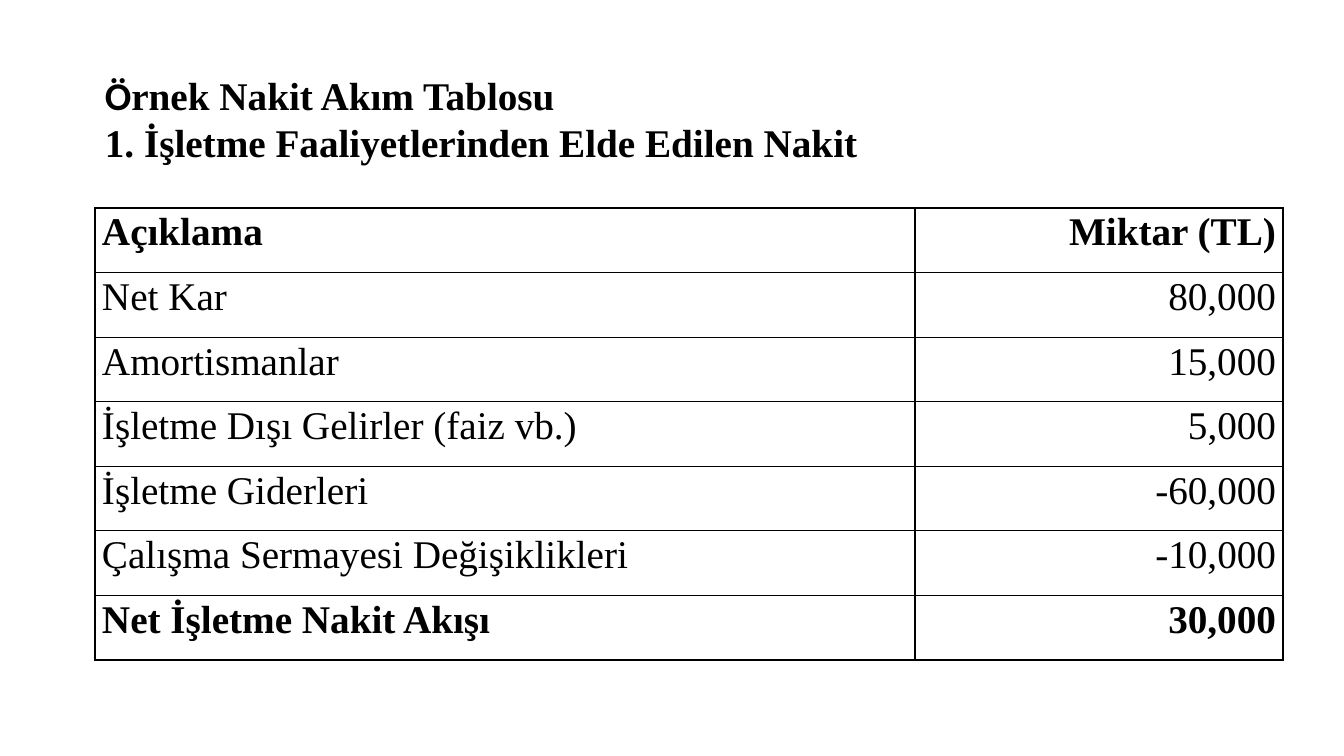
from lxml.etree import SubElement
from pptx import Presentation
from pptx.dml.color import RGBColor
from pptx.enum.text import MSO_ANCHOR, PP_ALIGN
from pptx.oxml.ns import qn
from pptx.util import Pt

SERIF = "Times New Roman"
INK = "000000"
TITLE = [
    [("Ö", "Calibri"), ("rnek Nakit Akım Tablosu", SERIF)],
    [("1. İşletme Faaliyetlerinden Elde Edilen Nakit", SERIF)],
]
ROWS = [
    ("Açıklama", "Miktar (TL)"),
    ("Net Kar", "80,000"),
    ("Amortismanlar", "15,000"),
    ("İşletme Dışı Gelirler (faiz vb.)", "5,000"),
    ("İşletme Giderleri", "-60,000"),
    ("Çalışma Sermayesi Değişiklikleri", "-10,000"),
    ("Net İşletme Nakit Akışı", "30,000"),
]
BOLD = (0, len(ROWS) - 1)
COLS = (820, 368)
ALIGN = (PP_ALIGN.JUSTIFY, PP_ALIGN.RIGHT)
LEFT, TOP, HEIGHT = 95, 208, 452


def px(n):
    return round(n * 914400 / 100.8)


def color(text):
    return RGBColor.from_string(text)


def style(run, face, bold):
    font = run.font
    font.name, font.size, font.bold = face, Pt(28), bold
    font.color.rgb = color(INK)


def border(cell):
    props = cell._tc.get_or_add_tcPr()
    for i, side in enumerate(("lnL", "lnR", "lnT", "lnB")):
        line = props.makeelement(qn("a:" + side), {"w": str(Pt(1))})
        fill = SubElement(line, qn("a:solidFill"))
        SubElement(fill, qn("a:srgbClr"), val=INK)
        props.insert(i, line)


def add_title(slide):
    box = slide.shapes.add_textbox(px(LEFT), px(66), px(1198), px(105))
    frame = box.text_frame
    frame.word_wrap = True
    frame.vertical_anchor = MSO_ANCHOR.MIDDLE
    frame.text = "\n".join("" for _ in TITLE)
    for para, parts in zip(frame.paragraphs, TITLE):
        para.alignment = PP_ALIGN.JUSTIFY
        for text, face in parts:
            run = para.add_run()
            run.text = text
            style(run, face, True)


def add_grid(slide):
    frame = slide.shapes.add_table(
        len(ROWS), len(COLS), px(LEFT), px(TOP), px(sum(COLS)), px(HEIGHT))
    table = frame.table
    table.horz_banding = False
    for col, width in zip(table.columns, COLS):
        col.width = px(width)
    for r, row in enumerate(ROWS):
        for c, text in enumerate(row):
            cell = table.cell(r, c)
            cell.fill.background()
            border(cell)
            cell.margin_left = cell.margin_right = px(7)
            cell.margin_top = cell.margin_bottom = 0
            cell.text_frame.text = text
            para = cell.text_frame.paragraphs[0]
            para.alignment = ALIGN[c]
            para.line_spacing = 1.07
            para.space_after = Pt(8)
            style(para.runs[0], SERIF, r in BOLD)


def main():
    deck = Presentation()
    deck.slide_width, deck.slide_height = px(1344), px(756)
    slide = deck.slides.add_slide(deck.slide_layouts[6])
    add_grid(slide)
    add_title(slide)
    deck.save("out.pptx")


if __name__ == "__main__":
    main()
